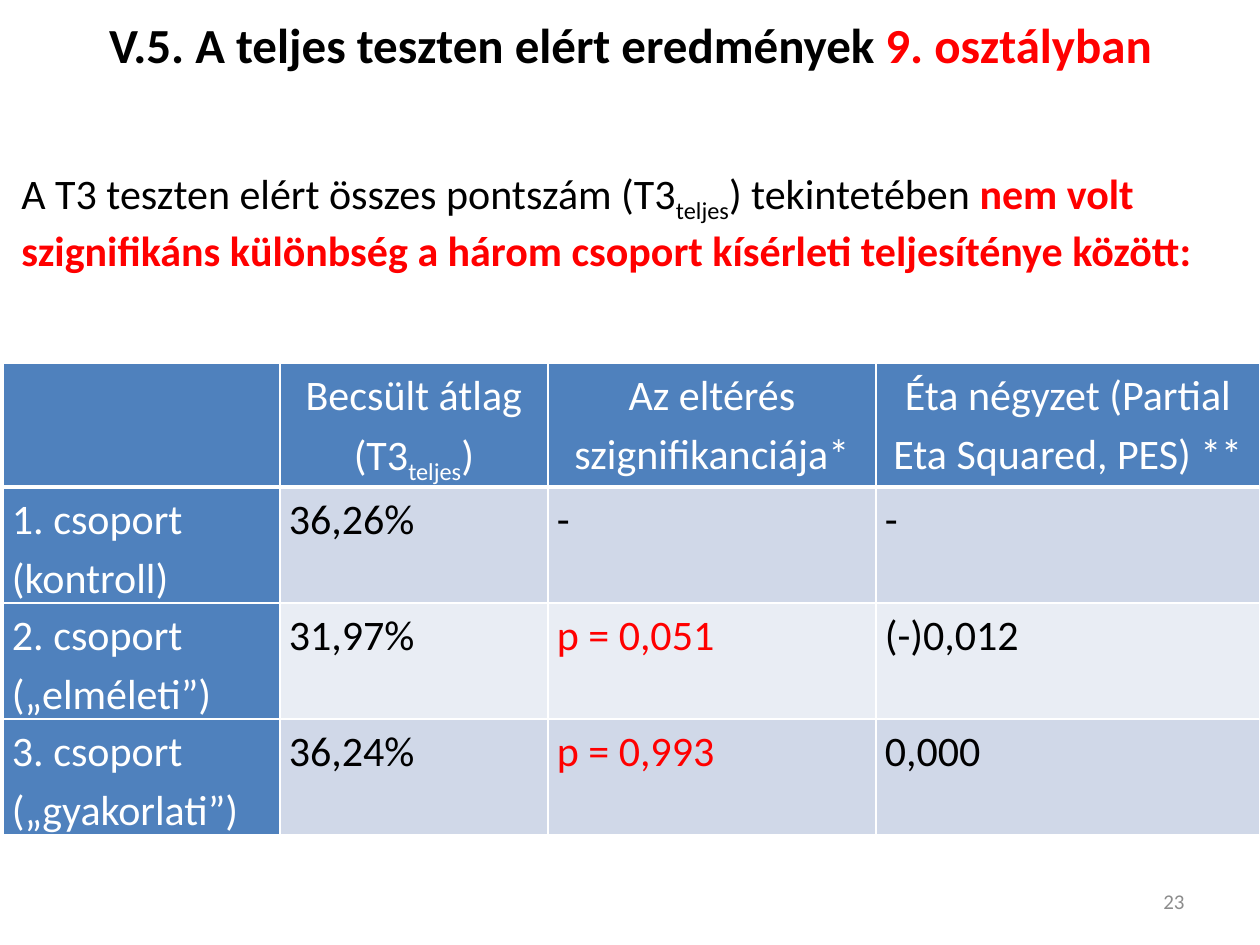
from lxml import etree
from pptx import Presentation
from pptx import util as u
from pptx.dml.color import RGBColor
from pptx.enum import text
from pptx.oxml.ns import qn

PX = 914400 / 126
COLORS = {"black": "000000", "red": "FF0000", "white": "FFFFFF", "grey": "8C8C8C",
          "blue": "4F81BD", "band": "D0D8E8", "light": "E9EDF4"}
LEFT, CENTER, RIGHT = text.PP_ALIGN.LEFT, text.PP_ALIGN.CENTER, text.PP_ALIGN.RIGHT
TOP, MIDDLE = text.MSO_ANCHOR.TOP, text.MSO_ANCHOR.MIDDLE


def px(n):
    return u.Emu(round(n * PX))


def color(name):
    return RGBColor.from_string(COLORS[name])


def add_run(p, content, size=24, fill="black", bold=False, sub=False):
    r = p.add_run()
    r.text = content
    r.font.name = "Calibri"
    r.font.size = u.Pt(size)
    r.font.bold = bold
    r.font.color.rgb = color(fill)
    if sub:
        r.font._element.set("baseline", "-25000")


class SlideBuilder:
    def __init__(self, prs):
        self.s = prs.slides.add_slide(prs.slide_layouts[6])

    def text_box(self, x, y, w, h, runs, align=LEFT, anchor=TOP, before=0):
        tf = self.s.shapes.add_textbox(px(x), px(y), px(w), px(h)).text_frame
        tf.word_wrap = True
        tf.vertical_anchor = anchor
        p = tf.paragraphs[0]
        p.alignment = align
        p.space_before = u.Pt(before)
        for content, fmt in runs:
            add_run(p, content, **fmt)

    def border(self, cell, side, width):
        ln = etree.SubElement(cell._tc.get_or_add_tcPr(), qn(f"a:ln{side}"), w=str(u.Pt(width)))
        fill = etree.SubElement(ln, qn("a:solidFill"))
        etree.SubElement(fill, qn("a:srgbClr"), val=COLORS["white"])

    def cell(self, cell, runs, fill, align, bottom):
        cell.margin_left = cell.margin_right = px(9)
        cell.margin_top = cell.margin_bottom = 0
        # Borders precede the fill in the cell properties
        for side, width in (("L", 1), ("R", 1), ("T", 1), ("B", bottom)):
            self.border(cell, side, width)
        cell.fill.solid()
        cell.fill.fore_color.rgb = color(fill)
        p = cell.text_frame.paragraphs[0]
        p.alignment = align
        p.line_spacing = 1.15
        for content, fmt in runs:
            add_run(p, content, **fmt)

    def table(self, x, y, widths, heights, rows):
        tbl = self.s.shapes.add_table(len(rows), len(widths), px(x), px(y),
                                      px(sum(widths)), px(sum(heights))).table
        for col, w in zip(tbl.columns, widths):
            col.width = px(w)
        for row, h in zip(tbl.rows, heights):
            row.height = px(h)
        for i, row in enumerate(rows):
            for j, runs in enumerate(row):
                fill = "blue" if i == 0 or j == 0 else "band" if i % 2 else "light"
                self.cell(tbl.cell(i, j), runs, fill,
                          LEFT if i else CENTER, 1 if i else 3)


def main():
    prs = Presentation()
    prs.slide_width, prs.slide_height = u.Inches(10), u.Inches(7.5)
    slide = SlideBuilder(prs)

    # Title
    slide.text_box(6, 0, 1249, 87, [
        ("V.5. A teljes teszten elért eredmények ", dict(size=28, bold=True)),
        ("9. osztályban", dict(size=28, bold=True, fill="red")),
    ], align=CENTER, anchor=MIDDLE)

    # Finding
    slide.text_box(9, 161, 1256, 858, [
        ("A T3 teszten elért összes pontszám (T3", {}),
        ("teljes", dict(sub=True)),
        (") tekintetében ", {}),
        ("nem volt szignifikáns különbség a három csoport kísérleti teljesíténye között:",
         dict(fill="red", bold=True)),
    ], before=4.8)

    # Slide number
    slide.text_box(903, 876, 294, 50, [("23", dict(size=12, fill="grey"))],
                   align=RIGHT, anchor=MIDDLE)

    # Results table
    white, red = dict(fill="white"), dict(fill="red")
    header = [
        [],
        [("Becsült átlag (T3", white), ("teljes", dict(fill="white", sub=True)), (")", white)],
        [("Az eltérés szignifikanciája*", white)],
        [("Éta négyzet (Partial Eta Squared, PES) **", white)],
    ]
    results = [
        ("1. csoport (kontroll)", "36,26%", "-", "-"),
        ("2. csoport („elméleti”)", "31,97%", "p = 0,051", "(-)0,012"),
        ("3. csoport („gyakorlati”)", "36,24%", "p = 0,993", "0,000"),
    ]
    body = [[[(group, white)], [(mean, {})],
             [(sig, red if sig.startswith("p") else {})], [(eta, {})]]
            for group, mean, sig, eta in results]
    slide.table(3, 363, [277, 268, 328, 384], [116, 112, 112, 112], [header] + body)

    prs.save("out.pptx")


if __name__ == "__main__":
    main()
